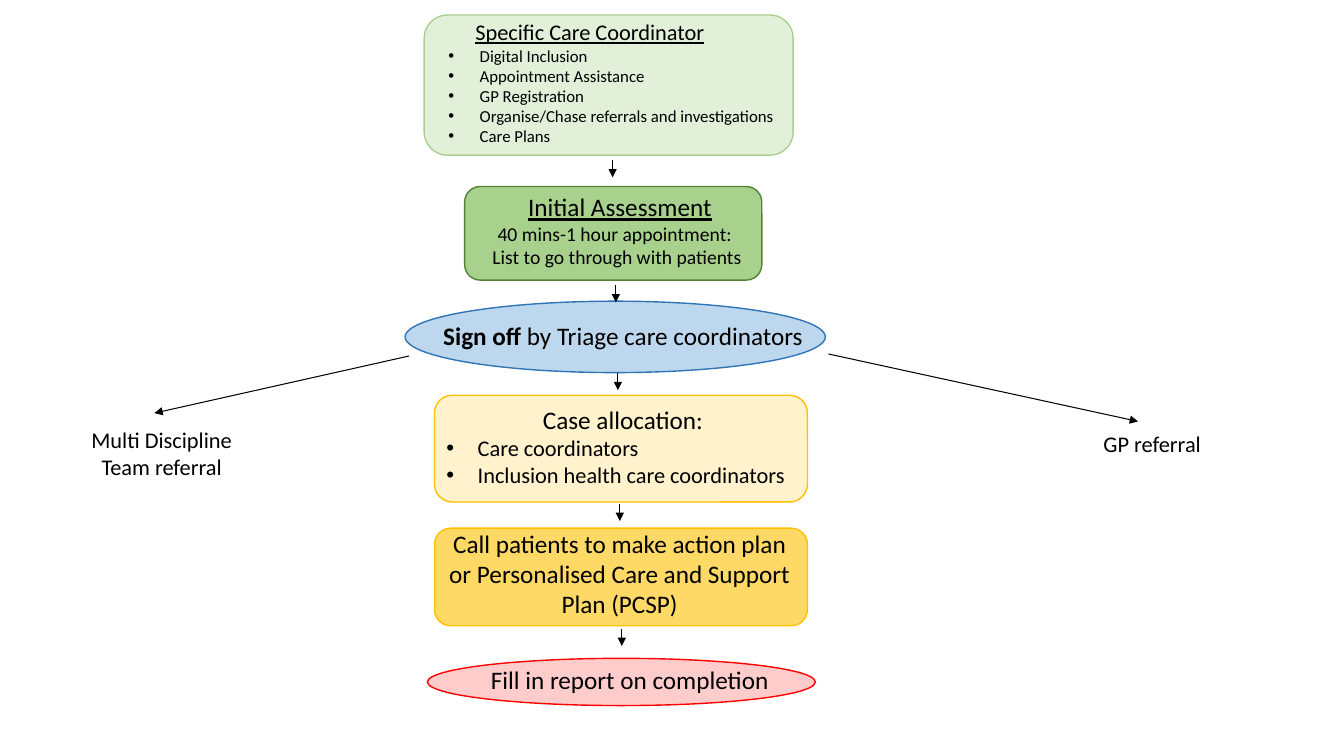
from lxml import etree
from pptx import Presentation
from pptx import util as u
from pptx.dml.color import RGBColor
from pptx.enum import shapes, text
from pptx.oxml import ns

BLACK = RGBColor(0x00, 0x00, 0x00)
PALE_GREEN = RGBColor(0xE2, 0xF0, 0xD9)
GREEN = RGBColor(0xA9, 0xD1, 0x8E)
DARK_GREEN = RGBColor(0x54, 0x82, 0x35)
PALE_BLUE = RGBColor(0xBD, 0xD7, 0xEE)
BLUE = RGBColor(0x2E, 0x75, 0xB6)
CREAM = RGBColor(0xFF, 0xF2, 0xCC)
YELLOW = RGBColor(0xFF, 0xD9, 0x66)
AMBER = RGBColor(0xFF, 0xC0, 0x00)
PINK = RGBColor(0xFF, 0xCC, 0xCC)
RED = RGBColor(0xFF, 0x00, 0x00)

FONT = "Calibri"
BULLET_INDENT = u.Cm(0.79)
STEP_ARROW = 0.43

ROUNDED = shapes.MSO_SHAPE.ROUNDED_RECTANGLE
PROCESS = shapes.MSO_SHAPE.FLOWCHART_ALTERNATE_PROCESS
OVAL = shapes.MSO_SHAPE.OVAL


def cm(*lengths):
    return [u.Cm(length) for length in lengths]


def add_stage(slide, kind, place, fill, outline):
    """Draw one stage in its own group and return the group's shapes."""
    members = slide.shapes.add_group_shape().shapes
    stage = members.add_shape(kind, *cm(*place))
    stage.shadow.inherit = False
    stage.fill.solid()
    stage.fill.fore_color.rgb = fill
    stage.line.color.rgb = outline
    stage.line.width = u.Pt(1)
    return members


def add_label(members, place):
    frame = members.add_textbox(*cm(*place)).text_frame
    frame.word_wrap = True
    return frame


def add_line(frame, *words, size, centred=False, bullet=False, bold_first=False,
             underline=False):
    """Add one paragraph, run by run, using the empty first one if it is free."""
    first = frame.paragraphs[0]
    paragraph = frame.add_paragraph() if first.runs else first
    paragraph.alignment = text.PP_ALIGN.CENTER if centred else text.PP_ALIGN.LEFT
    if bullet:
        properties = paragraph._p.get_or_add_pPr()
        properties.set("marL", str(BULLET_INDENT))
        properties.set("indent", str(-BULLET_INDENT))
        etree.SubElement(properties, ns.qn("a:buFont"), typeface="Arial")
        etree.SubElement(properties, ns.qn("a:buChar"), char="•")
    for position, wording in enumerate(words):
        run = paragraph.add_run()
        run.text = wording
        run.font.name = FONT
        run.font.size = u.Pt(size)
        run.font.color.rgb = BLACK
        run.font.bold = bold_first and position == 0
        run.font.underline = underline


def add_arrow(slide, x1, y1, x2, y2):
    arrow = slide.shapes.add_connector(
        shapes.MSO_CONNECTOR.STRAIGHT, *cm(x1, y1, x2, y2))
    arrow.line.color.rgb = BLACK
    arrow.line.width = u.Pt(0.75)
    etree.SubElement(arrow.line._get_or_add_ln(), ns.qn("a:tailEnd"), type="triangle")
    etree.SubElement(arrow._element.spPr, ns.qn("a:effectLst"))


def main():
    deck = Presentation()
    deck.slide_width, deck.slide_height = cm(33.87, 19.05)
    slide = deck.slides.add_slide(deck.slide_layouts[6])

    # Specific care coordinator and duties
    coordinator = add_stage(slide, ROUNDED, (10.69, 0.38, 9.3, 3.53), PALE_GREEN, GREEN)
    heading = add_label(coordinator, (11.73, 0.33, 7.72, 0.91))
    add_line(heading, "Specific Care Coordinator", size=16, underline=True)
    duties = add_label(coordinator, (11.05, 1.02, 9.27, 2.72))
    for duty in ("Digital Inclusion", "Appointment Assistance", "GP Registration",
                 "Organise/Chase referrals and investigations", "Care Plans"):
        add_line(duties, duty, size=12, bullet=True)

    # Initial assessment
    assessment = add_stage(slide, PROCESS, (11.71, 4.7, 7.49, 2.36), GREEN, DARK_GREEN)
    heading = add_label(assessment, (13.06, 4.7, 5.59, 1.02))
    add_line(heading, "Initial Assessment", size=18, underline=True)
    appointment = add_label(assessment, (11.56, 5.46, 7.98, 1.45))
    for detail in ("40 mins-1 hour appointment: ", "List to go through with patients"):
        add_line(appointment, detail, size=14, centred=True)

    # Sign off
    sign_off = add_stage(slide, OVAL, (10.21, 7.59, 10.59, 1.8), PALE_BLUE, BLUE)
    add_line(add_label(sign_off, (10.92, 7.95, 10.13, 1.14)),
             "Sign off ", "by Triage care coordinators", size=18, bold_first=True)

    # Referrals to either side
    add_arrow(slide, 10.31, 8.97, 3.89, 10.41)
    add_arrow(slide, 20.88, 8.92, 28.68, 10.62)
    add_line(add_label(slide.shapes, (27.56, 10.72, 3.45, 0.94)), "GP referral", size=16)
    add_line(add_label(slide.shapes, (1.6, 10.62, 4.95, 1.63)),
             "Multi Discipline Team referral", size=16, centred=True)

    # Case allocation
    allocation = add_stage(slide, PROCESS, (10.95, 9.96, 9.4, 2.69), CREAM, AMBER)
    teams = add_label(allocation, (11, 10.06, 9.4, 2.39))
    add_line(teams, "Case allocation:", size=18, centred=True)
    for team in ("Care coordinators", "Inclusion health care coordinators"):
        add_line(teams, team, size=16, bullet=True)

    # Action plan
    plan = add_stage(slide, PROCESS, (10.95, 13.31, 9.4, 2.46), YELLOW, AMBER)
    add_line(add_label(plan, (11.07, 13.18, 9.09, 2.57)),
             "Call patients to make action plan or Personalised Care and Support Plan (PCSP)",
             size=18, centred=True)

    # Completion report
    report = add_stage(slide, OVAL, (10.77, 16.59, 9.78, 1.19), PINK, RED)
    add_line(add_label(report, (12.12, 16.61, 7.57, 1.02)),
             "Fill in report on completion", size=18)

    # Arrows from stage to stage
    for x, top in ((15.44, 4.04), (15.52, 7.19), (15.57, 9.4), (15.62, 12.7),
                   (15.67, 15.85)):
        add_arrow(slide, x, top, x, top + STEP_ARROW)

    deck.save("out.pptx")


if __name__ == "__main__":
    main()
